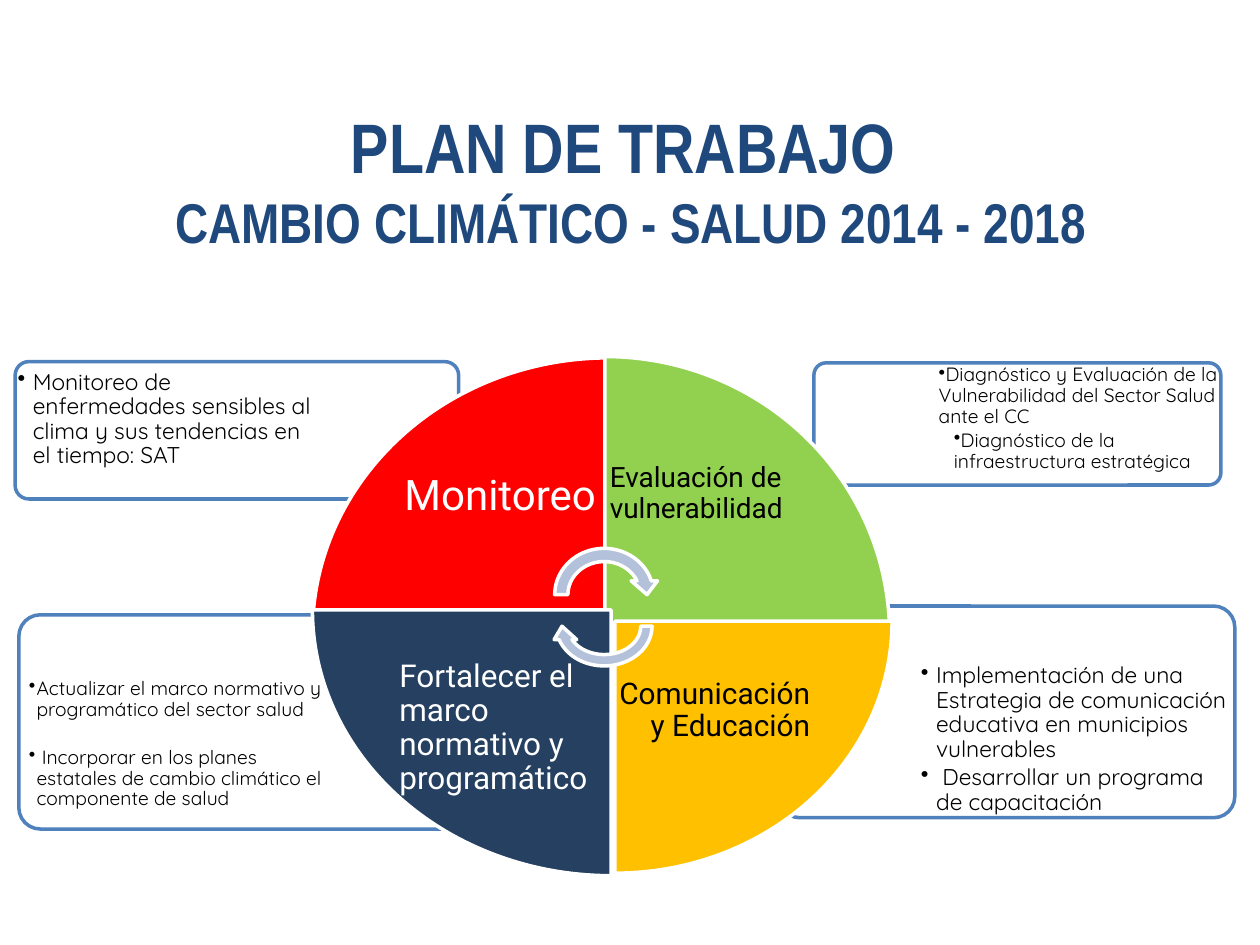
"""Builds the climate change and health work plan slide as a four-part cycle."""
from lxml.etree import SubElement
from pptx import Presentation
from pptx.dml.color import RGBColor
from pptx.enum.shapes import MSO_SHAPE
from pptx.enum.text import MSO_ANCHOR, PP_ALIGN
from pptx.oxml.ns import qn
from pptx.util import Inches, Pt

NAVY = RGBColor(0x1F, 0x49, 0x7D)
BLUE = RGBColor(0x4F, 0x81, 0xBD)
WHITE = RGBColor(0xFF, 0xFF, 0xFF)
BLACK = RGBColor(0, 0, 0)
RED = RGBColor(0xFF, 0, 0)
GREEN = RGBColor(0x92, 0xD0, 0x50)
AMBER = RGBColor(0xFF, 0xC0, 0)
DEEP_BLUE = RGBColor(0x25, 0x40, 0x61)
PALE_BLUE = RGBColor(0xB3, 0xC1, 0xDB)

prs = Presentation()
prs.slide_width = Inches(10)
prs.slide_height = Inches(7.5)
slide = prs.slides.add_slide(prs.slide_layouts[6])


def add_figure(preset, place, fill, line, turn=0):
    figure = slide.shapes.add_shape(preset, *map(Inches, place))
    figure.rotation = turn
    figure.shadow.inherit = False
    figure.fill.solid()
    figure.fill.fore_color.rgb = fill
    figure.line.color.rgb = line
    figure.line.width = Pt(2)
    return figure


def add_frame(place, insets, anchor):
    frame = slide.shapes.add_textbox(*map(Inches, place)).text_frame
    frame.word_wrap = True
    frame.vertical_anchor = anchor
    (frame.margin_left, frame.margin_top,
     frame.margin_right, frame.margin_bottom) = map(Inches, insets)
    return frame


heading = add_frame((0.59, 0.99, 8.84, 0.87), (0.1, 0.05, 0.1, 0.05),
                    MSO_ANCHOR.MIDDLE).paragraphs[0]
heading.alignment = PP_ALIGN.CENTER
for words, size in (("PLAN DE TRABAJO ", 40),
                    ("CAMBIO CLIMÁTICO - SALUD 2014 - 2018", 32)):
    if heading.runs:
        heading.add_line_break()
    run = heading.add_run()
    run.text = words
    run.font.name = "Arial Narrow"
    run.font.size = Pt(size)
    run.font.bold = True
    run.font.color.rgb = NAVY

TOP, MIDDLE = MSO_ANCHOR.TOP, MSO_ANCHOR.MIDDLE
actions = [
    ((6.18, 4.81, 3.62, 1.68), (7.31, 5.27, 2.46, 1.19), (0, 0, 0, 0), TOP, 13, 2,
     [("Implementación de una Estrategia de comunicación educativa en "
       "municipios vulnerables", 0.12, -0.12),
      (" Desarrollar un programa de capacitación", 0.12, -0.12)]),
    ((0.15, 4.88, 3.7, 1.7), (0.18, 5.34, 2.52, 1.2), (0.05, 0.05, 0.05, 0.05),
     TOP, 11, 15.5,
     [("Actualizar el marco normativo y programático del sector salud", 0.06, -0.06),
      (" Incorporar en los planes estatales de cambio climático el "
       "componente de salud", 0.06, -0.06)]),
    ((6.46, 2.88, 3.23, 0.97), (7.45, 2.9, 2.22, 0.69), (0, 0.16, 0, 0), MIDDLE, 11, 2,
     [("Diagnóstico y Evaluación de la Vulnerabilidad del Sector Salud ante el CC",
       0, 0),
      ("Diagnóstico de la infraestructura estratégica", 0.12, 0)]),
    ((0.12, 2.87, 3.52, 1.09), (0.14, 2.89, 2.41, 0.77), (0, 0.05, 0, 0.05), TOP, 13, 2,
     [("Monitoreo de enfermedades sensibles al clima y sus tendencias en el "
       "tiempo: SAT", 0.12, -0.12)]),
]
for card_place, text_place, insets, anchor, size, gap, items in actions:
    card = add_figure(MSO_SHAPE.ROUNDED_RECTANGLE, card_place, WHITE, BLUE)
    card.adjustments[0] = 0.1
    frame = add_frame(text_place, insets, anchor)
    for index, (words, margin, indent) in enumerate(items):
        item = frame.add_paragraph() if index else frame.paragraphs[0]
        properties = item._p.get_or_add_pPr()
        properties.set("marL", str(Inches(margin)))
        properties.set("indent", str(Inches(indent)))
        SubElement(properties, qn("a:buChar")).set("char", "•")
        item.line_spacing = 0.9
        if index:
            item.space_before = Pt(gap)
        run = item.add_run()
        run.text = words
        run.font.name = "Quicksand"
        run.font.size = Pt(size)
        run.font.color.rgb = BLACK

components = [
    ("Monitoreo", (2.48, 2.84, 2.35, 2.18), 0, RED,
     (3.17, 3.48, 1.66, 0.92), 0.04, 24, WHITE, PP_ALIGN.LEFT),
    ("Evaluación de vulnerabilidad", (4.83, 2.8, 2.2, 2.26), 90, GREEN,
     (4.8, 3.47, 1.6, 0.9), 0.04, 16, BLACK, PP_ALIGN.LEFT),
    ("Comunicación y Educación", (4.88, 4.93, 2.2, 2), 180, AMBER,
     (4.88, 4.93, 1.55, 1.42), 0, 17, BLACK, PP_ALIGN.RIGHT),
    ("Fortalecer el marco normativo y programático", (2.61, 4.71, 2.11, 2.37), 270,
     DEEP_BLUE, (3.17, 5.03, 1.67, 1.5), 0, 18, WHITE, PP_ALIGN.LEFT),
]
for name, wedge_place, turn, fill, text_place, inset, size, color, side in components:
    add_figure(MSO_SHAPE.PIE_WEDGE, wedge_place, fill, WHITE, turn)
    label = add_frame(text_place, (inset, 0, 0.04 if side == PP_ALIGN.LEFT else 0, 0),
                      MIDDLE).paragraphs[0]
    label.alignment = side
    label.line_spacing = 0.9
    run = label.add_run()
    run.text = name
    run.font.name = "Roboto"
    run.font.size = Pt(size)
    run.font.color.rgb = color

for place, turn in (((4.35, 4.3, 0.89, 0.84), 0), ((4.37, 4.61, 0.85, 0.72), 180)):
    add_figure(MSO_SHAPE.CIRCULAR_ARROW, place, PALE_BLUE, WHITE, turn)

prs.save("out.pptx")
